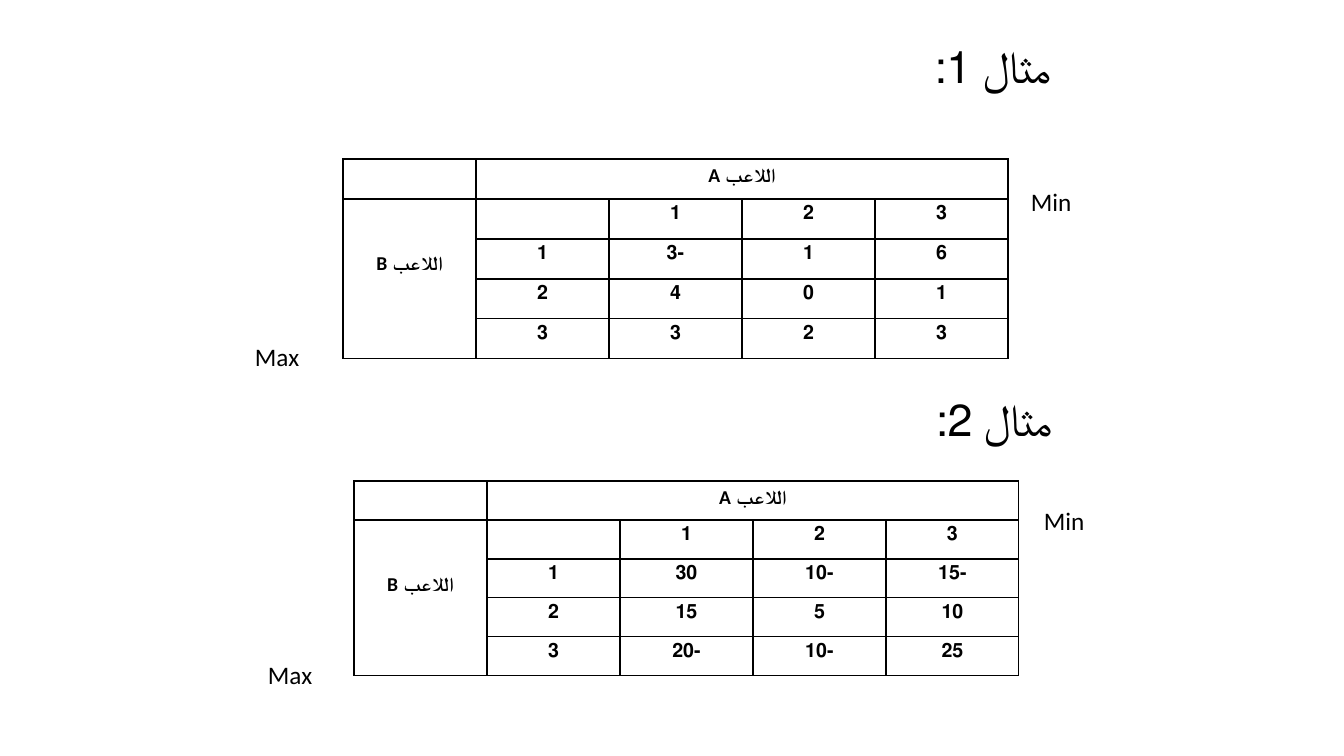
from dataclasses import dataclass

from lxml import etree
from pptx import Presentation
from pptx.dml.color import RGBColor
from pptx.enum.text import MSO_ANCHOR, MSO_AUTO_SIZE, PP_ALIGN
from pptx.oxml.ns import qn
from pptx.util import Pt

PX = 914400 / 100.8
TITLE_ONLY = 5
LEFT, CENTER, RIGHT = PP_ALIGN.LEFT, PP_ALIGN.CENTER, PP_ALIGN.RIGHT
TOP = MSO_ANCHOR.TOP
GROW = MSO_AUTO_SIZE.SHAPE_TO_FIT_TEXT


def px(count):
    return round(count * PX)


@dataclass(frozen=True)
class Theme:
    font: str = "Calibri"
    ink: str = "000000"
    heading_size: int = 32
    label_size: int = 18
    cell_size: int = 14
    border_width: int = 1


class GameSlide:
    def __init__(self, page, theme):
        self.page = page
        self.theme = theme

    def fill_text(self, frame, text, size, align, bold=False, rtl=False):
        frame.text = text
        para = frame.paragraphs[0]
        para.alignment = align
        if rtl:
            para._p.get_or_add_pPr().set("rtl", "1")
        for span in para.runs:
            span.font.name = self.theme.font
            span.font.size = Pt(size)
            span.font.bold = bold
            span.font.color.rgb = RGBColor.from_string(self.theme.ink)

    def place_text(self, box, left, top, width, height):
        box.left, box.top = px(left), px(top)
        box.width, box.height = px(width), px(height)
        frame = box.text_frame
        frame.word_wrap = True
        frame.auto_size = GROW
        frame.vertical_anchor = TOP
        return frame

    def add_box(self):
        return self.page.shapes.add_textbox(0, 0, 0, 0)

    def heading(self, box, text, left, top):
        frame = self.place_text(box, left, top, 265, 65)
        self.fill_text(frame, text, self.theme.heading_size, RIGHT, rtl=True)

    def label(self, text, left, top):
        frame = self.place_text(self.add_box(), left, top, 83, 40)
        self.fill_text(frame, text, self.theme.label_size, LEFT)

    def style_cell(self, cell):
        """Rule all four sides, clear the fill and keep empty cells at cell size."""
        properties = cell._tc.get_or_add_tcPr()
        for side in ("lnL", "lnR", "lnT", "lnB"):
            line = etree.SubElement(properties, qn(f"a:{side}"),
                                    w=str(Pt(self.theme.border_width)))
            fill = etree.SubElement(line, qn("a:solidFill"))
            etree.SubElement(fill, qn("a:srgbClr"), val=self.theme.ink)
        cell.fill.background()
        if not cell.text_frame.text:
            para = cell.text_frame.paragraphs[0]
            etree.SubElement(para._p, qn("a:endParaRPr"),
                             sz=str(self.theme.cell_size * 100))

    def payoff_table(self, payoffs, left, top, column_width, row_height):
        """Draw the payoffs with numbered strategies and a name for each player."""
        count = len(payoffs) + 2
        numbers = [str(number + 1) for number in range(len(payoffs))]
        rows = [["", "اللاعب A"], ["اللاعب B", "", *numbers]]
        rows += [["", number, *map(str, values)]
                 for number, values in zip(numbers, payoffs)]
        table = self.page.shapes.add_table(
            count, count, px(left), px(top),
            px(column_width * count), px(row_height * count)).table
        table.first_row = table.horz_banding = False
        for column in table.columns:
            column.width = px(column_width)
        for row in table.rows:
            row.height = px(row_height)
        for row_index, texts in enumerate(rows):
            for column_index, text in enumerate(texts):
                if text:
                    frame = table.cell(row_index, column_index).text_frame
                    self.fill_text(frame, text, self.theme.cell_size, CENTER,
                                   bold=True, rtl=True)
        for cell in table.iter_cells():
            self.style_cell(cell)
        table.cell(0, 1).merge(table.cell(0, count - 1))
        player_b = table.cell(1, 0)
        player_b.merge(table.cell(count - 1, 0))
        player_b.margin_top = px(53)


def main():
    deck = Presentation()
    deck.slide_width, deck.slide_height = px(1344), px(756)
    page = deck.slides.add_slide(deck.slide_layouts[TITLE_ONLY])
    game = GameSlide(page, Theme())

    game.heading(page.shapes.title, "مثال 1:", 796, 34)
    game.payoff_table([(-3, 1, 6), (4, 0, 1), (3, 2, 3)], 343, 159, 133, 40)
    game.label("Min", 1021, 181)
    game.label("Max", 245, 336)

    game.heading(game.add_box(), "مثال 2:", 797, 387)
    game.payoff_table([(30, -10, -15), (15, 5, 10), (-20, -10, 25)],
                      354, 481, 133, 39)
    game.label("Min", 1034, 500)
    game.label("Max", 258, 654)

    deck.save("out.pptx")


if __name__ == "__main__":
    main()
